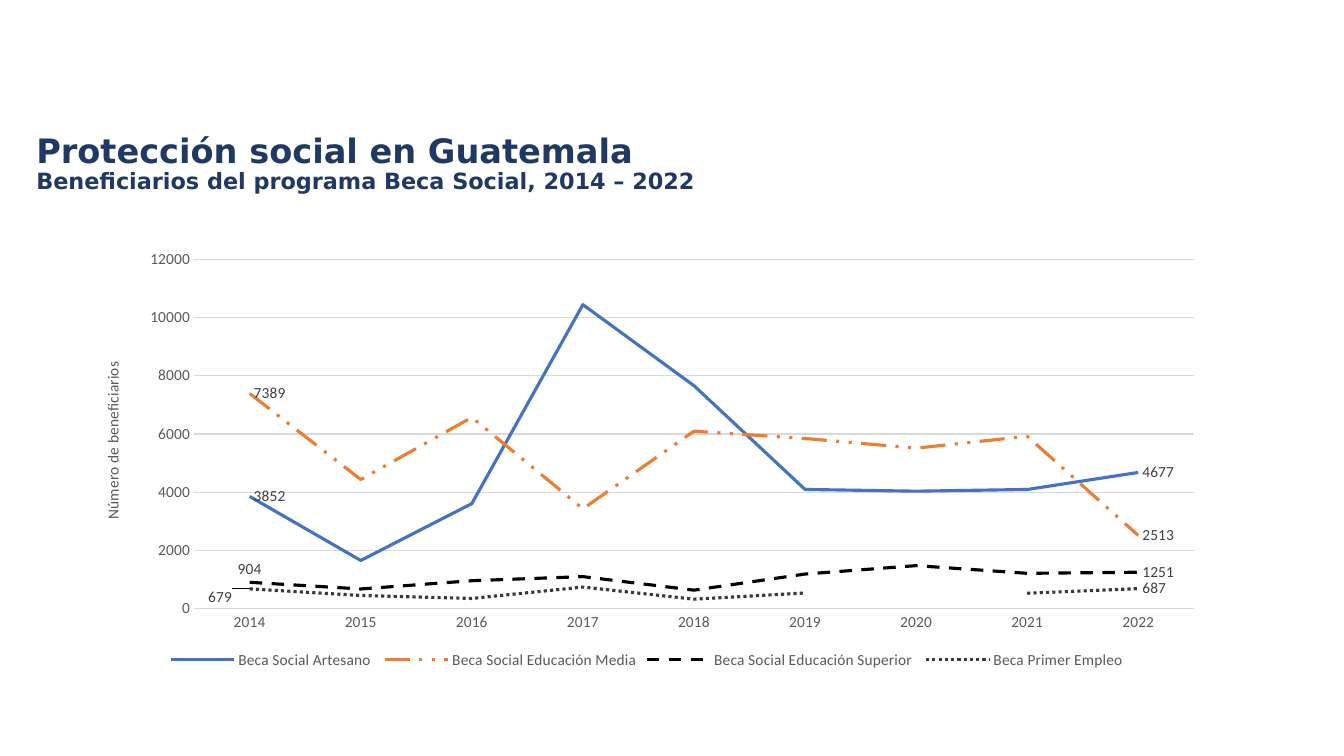
from lxml.etree import SubElement
from pptx import Presentation
from pptx.chart.data import CategoryChartData
from pptx.dml.color import RGBColor
from pptx.enum.chart import XL_CHART_TYPE, XL_LABEL_POSITION, XL_LEGEND_POSITION, XL_MARKER_STYLE, XL_TICK_MARK
from pptx.enum.dml import MSO_LINE
from pptx.enum.text import MSO_ANCHOR, MSO_AUTO_SIZE, PP_ALIGN
from pptx.oxml.ns import qn
from pptx.util import Cm, Pt

NAVY = RGBColor(0x20, 0x38, 0x64)
BLUE = RGBColor(0x44, 0x72, 0xC4)
ORANGE = RGBColor(0xED, 0x7D, 0x31)
BLACK = RGBColor(0x00, 0x00, 0x00)
CHARCOAL = RGBColor(0x3B, 0x38, 0x38)
LABEL_GRAY = RGBColor(0x40, 0x40, 0x40)
TEXT_GRAY = RGBColor(0x59, 0x59, 0x59)
GRID_GRAY = RGBColor(0xD9, 0xD9, 0xD9)

YEARS = [str(year) for year in range(2014, 2023)]
SCHOLARSHIPS = [
    ("Beca Social Artesano ", BLUE, MSO_LINE.SOLID,
     [3852, 1654, 3608, 10441, 7658, 4094, 4034, 4093, 4677]),
    ("Beca Social Educación Media", ORANGE, MSO_LINE.DASH_DOT_DOT,
     [7389, 4434, 6570, 3429, 6096, 5845, 5513, 5922, 2513]),
    ("Beca Social Educación Superior ", BLACK, MSO_LINE.DASH,
     [904, 676, 959, 1099, 634, 1188, 1477, 1213, 1251]),
    ("Beca Primer Empleo ", CHARCOAL, MSO_LINE.ROUND_DOT,
     [679, 452, 350, 741, 325, 538, None, 528, 687]),
]


def style_font(font, name="Calibri", size=11, color=TEXT_GRAY, bold=False):
    font.name = name
    font.size = Pt(size)
    font.bold = bold
    font.color.rgb = color


def fill_layout(layout, **settings):
    manual = SubElement(layout, qn("c:manualLayout"))
    for tag, value in settings.items():
        SubElement(manual, qn(f"c:{tag}")).set("val", str(value))


deck = Presentation()
deck.slide_width, deck.slide_height = Cm(33.87), Cm(19.05)
page = deck.slides.add_slide(deck.slide_layouts[5])

# Title and subtitle
title = page.shapes.title
title.left, title.top, title.width, title.height = Cm(0.66), Cm(2.9), Cm(29.21), Cm(2.49)
frame = title.text_frame
frame.word_wrap = True
frame.auto_size = MSO_AUTO_SIZE.NONE
frame.vertical_anchor = MSO_ANCHOR.MIDDLE
para = frame.paragraphs[0]
para.alignment = PP_ALIGN.LEFT
para.line_spacing = 0.9
span = para.add_run()
span.text = "Protección social en Guatemala"
style_font(span.font, "DejaVu Sans", 24, NAVY, True)
para.add_line_break()
span = para.add_run()
span.text = "Beneficiarios del programa Beca Social, 2014 – 2022"
style_font(span.font, "DejaVu Sans", 16, NAVY, True)

# Line chart
data = CategoryChartData()
data.categories = YEARS
for name, color, dash, values in SCHOLARSHIPS:
    data.add_series(name, values)
chart = page.shapes.add_chart(XL_CHART_TYPE.LINE, Cm(2.03), Cm(6.1), Cm(28.63), Cm(10.87), data).chart
chart.has_title = False
style_font(chart.font, color=BLACK)

# Plot area position, as shares of the chart
plot_area = chart.plots[0]._element.getparent()
layout = plot_area.find(qn("c:layout"))
if layout is None:
    layout = SubElement(plot_area, qn("c:layout"))
    plot_area.insert(0, layout)
fill_layout(layout, layoutTarget="inner", xMode="edge", yMode="edge", x=0.1, y=0.04, w=0.88, h=0.81)

# Axes
years, amounts = chart.category_axis, chart.value_axis
for axis in (years, amounts):
    axis.major_tick_mark = axis.minor_tick_mark = XL_TICK_MARK.NONE
    style_font(axis.tick_labels.font)
for line in (years.format.line, amounts.major_gridlines.format.line):
    line.color.rgb = GRID_GRAY
    line.width = Pt(0.75)
amounts.format.line.fill.background()
amounts.minimum_scale, amounts.maximum_scale, amounts.major_unit = 0, 12000, 2000
para = amounts.axis_title.text_frame.paragraphs[0]
span = para.add_run()
span.text = "Número de beneficiarios"
style_font(span.font)

# Legend
chart.has_legend = True
chart.legend.position = XL_LEGEND_POSITION.BOTTOM
chart.legend.include_in_layout = False
style_font(chart.legend.font)

# Series, with labels on the first and last year
for series, (name, color, dash, values) in zip(chart.plots[0].series, SCHOLARSHIPS):
    series.smooth = False
    series.marker.style = XL_MARKER_STYLE.NONE
    series.format.line.color.rgb = color
    series.format.line.width = Pt(2.25)
    series.format.line.dash_style = dash
    series.data_labels.show_value = False
    for index in (0, len(YEARS) - 1):
        label = series.points[index].data_label
        style_font(label.font, color=LABEL_GRAY)
        above = index == 0 and values[0] == 904
        label.position = XL_LABEL_POSITION.ABOVE if above else XL_LABEL_POSITION.RIGHT

# The lowest first label sits left of its point
first_label = series._element.find(".//" + qn("c:dLbl"))
layout = SubElement(first_label, qn("c:layout"))
first_label.insert(1, layout)
fill_layout(layout, x=-0.04, y=0.02)

deck.save("out.pptx")
